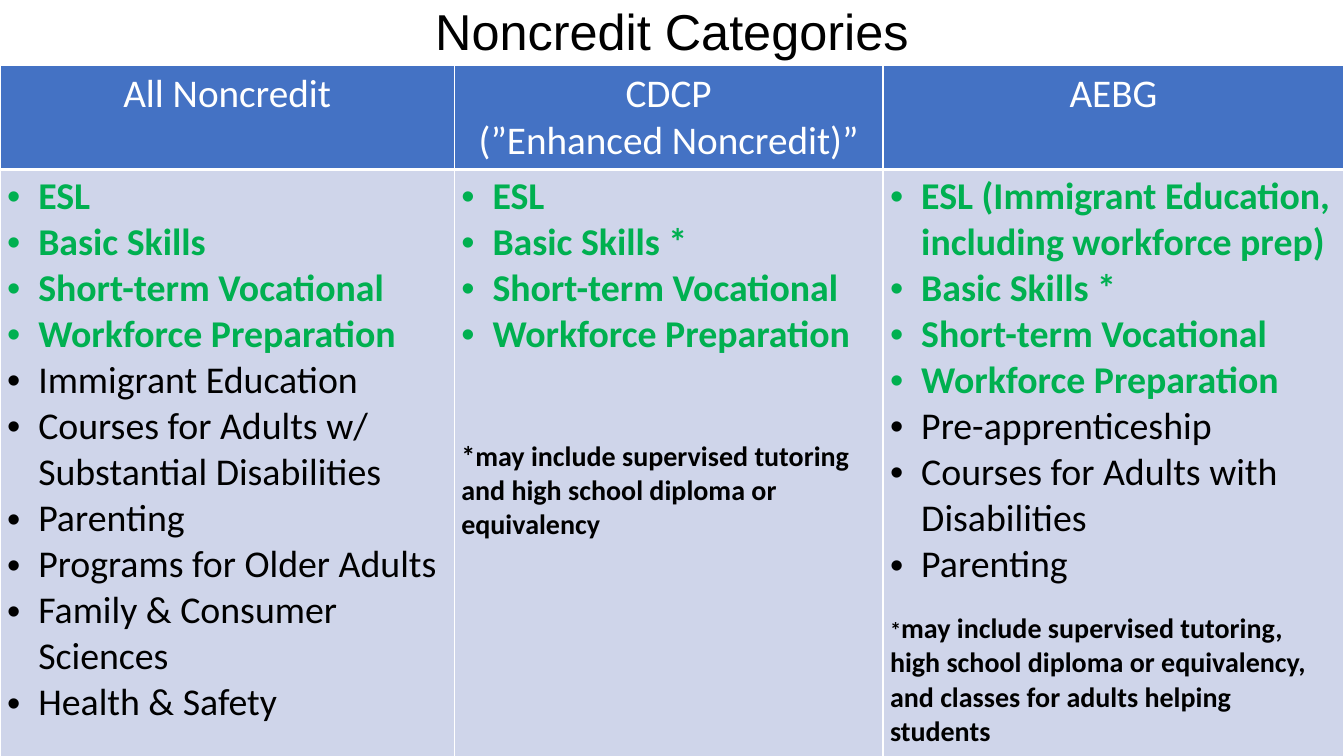
from lxml.etree import SubElement
from pptx import Presentation
from pptx.dml.color import RGBColor
from pptx.enum.text import MSO_ANCHOR, PP_ALIGN
from pptx.oxml import parse_xml
from pptx.oxml.ns import nsdecls, qn
from pptx.util import Inches, Pt

WHITE, BLACK, GREEN = "FFFFFF", "000000", "00B050"
BLUE, PALE = "4472C4", "CFD5EA"
COLS = (0.338, 0.319, 0.343)
ROWS = (0.136, 0.777)

HEADS = (("All Noncredit",), ("CDCP", "(”Enhanced Noncredit)”"), ("AEBG",))
# Each column: shared (green) items, other items, gap before the note, note runs
LISTS = (
    (("ESL", "Basic Skills", "Short-term Vocational", "Workforce Preparation"),
     ("Immigrant Education", "Courses for Adults w/ Substantial Disabilities",
      "Parenting", "Programs for Older Adults", "Family & Consumer Sciences",
      "Health & Safety"),
     0, ()),
    (("ESL", "Basic Skills *", "Short-term Vocational", "Workforce Preparation"),
     (),
     58.5, (("*may include supervised tutoring and high school diploma or "
             "equivalency", 20),)),
    (("ESL (Immigrant Education, including workforce prep)", "Basic Skills *",
      "Short-term Vocational", "Workforce Preparation"),
     ("Pre-apprenticeship", "Courses for Adults with Disabilities", "Parenting"),
     17, (("*", 16),
          ("may include supervised tutoring, high school diploma or "
           "equivalency, and classes for adults helping students", 20))),
)


def paint(target, color):
    target.rgb = RGBColor.from_string(color)


class Deck:
    def __init__(self):
        self.prs = Presentation()
        self.prs.slide_width, self.prs.slide_height = Inches(13.33), Inches(7.5)
        self.slide = self.prs.slides.add_slide(self.prs.slide_layouts[5])

    def wide(self, share):
        return round(self.prs.slide_width * share)

    def high(self, share):
        return round(self.prs.slide_height * share)

    def style(self, para, size, color, bold=False, face="Calibri"):
        font = para.font
        font.name, font.size, font.bold = face, Pt(size), bold
        paint(font.color, color)

    def title(self, text, height):
        box = self.slide.shapes.title
        box.left, box.top = 0, 0
        box.width, box.height = self.wide(1), self.high(height)
        frame = box.text_frame
        frame.text, frame.vertical_anchor = text, MSO_ANCHOR.MIDDLE
        para = frame.paragraphs[0]
        para.alignment, para.line_spacing = PP_ALIGN.CENTER, 0.9
        self.style(para, 36, BLACK, face="Arial")

    def table(self, top, cols, rows):
        shape = self.slide.shapes.add_table(
            len(rows), len(cols), 0, self.high(top),
            self.wide(sum(cols)), self.high(sum(rows)))
        grid = shape.table
        grid.horz_banding = False
        for col, share in zip(grid.columns, cols):
            col.width = self.wide(share)
        for row, share in zip(grid.rows, rows):
            row.height = self.high(share)
        return grid

    def cell(self, cell, fill, top, bottom):
        """Set margins, fill and white borders; top and bottom are in points."""
        cell.margin_left = cell.margin_right = Inches(0.07)
        cell.margin_top = cell.margin_bottom = Inches(0.04)
        cell.fill.solid()
        paint(cell.fill.fore_color, fill)
        props = cell._tc.get_or_add_tcPr()
        sides = (("L", 1), ("R", 1), ("T", top), ("B", bottom))
        for spot, (side, width) in enumerate(sides):
            props.insert(spot, parse_xml(
                f'<a:ln{side} {nsdecls("a")} w="{Pt(width)}"><a:solidFill>'
                f'<a:srgbClr val="{WHITE}"/></a:solidFill></a:ln{side}>'))

    def line(self, frame, runs):
        """Add a paragraph, using the empty first one if it is still free."""
        para = frame.paragraphs[0]
        if para.runs:
            para = frame.add_paragraph()
        for text in runs:
            para.add_run().text = text
        return para

    def head(self, cell, lines):
        self.cell(cell, BLUE, 1, 3)
        for text in lines:
            para = self.line(cell.text_frame, [text])
            para.alignment = PP_ALIGN.CENTER
            self.style(para, 28, WHITE)

    def bullet(self, frame, text, color, bold):
        para = self.line(frame, [text])
        props = para._p.get_or_add_pPr()
        props.set("marL", str(Inches(0.31)))
        props.set("indent", str(Inches(-0.31)))
        SubElement(props, qn("a:buFont")).set("typeface", "Arial")
        SubElement(props, qn("a:buChar")).set("char", "•")
        self.style(para, 27, color, bold)

    def note(self, frame, gap, parts):
        para = self.line(frame, [text for text, _ in parts])
        para.space_before = Pt(gap)
        self.style(para, 20, BLACK, True)
        for run, (_, size) in zip(para.runs, parts):
            run.font.size = Pt(size)

    def body(self, cell, shared, other, gap, parts):
        self.cell(cell, PALE, 3, 1)
        frame = cell.text_frame
        for text in shared:
            self.bullet(frame, text, GREEN, True)
        for text in other:
            self.bullet(frame, text, BLACK, False)
        if parts:
            self.note(frame, gap, parts)


def main():
    deck = Deck()
    deck.title("Noncredit Categories", 0.09)
    grid = deck.table(1 - sum(ROWS), COLS, ROWS)
    for col, (lines, items) in enumerate(zip(HEADS, LISTS)):
        deck.head(grid.cell(0, col), lines)
        deck.body(grid.cell(1, col), *items)
    deck.prs.save("out.pptx")


if __name__ == "__main__":
    main()
